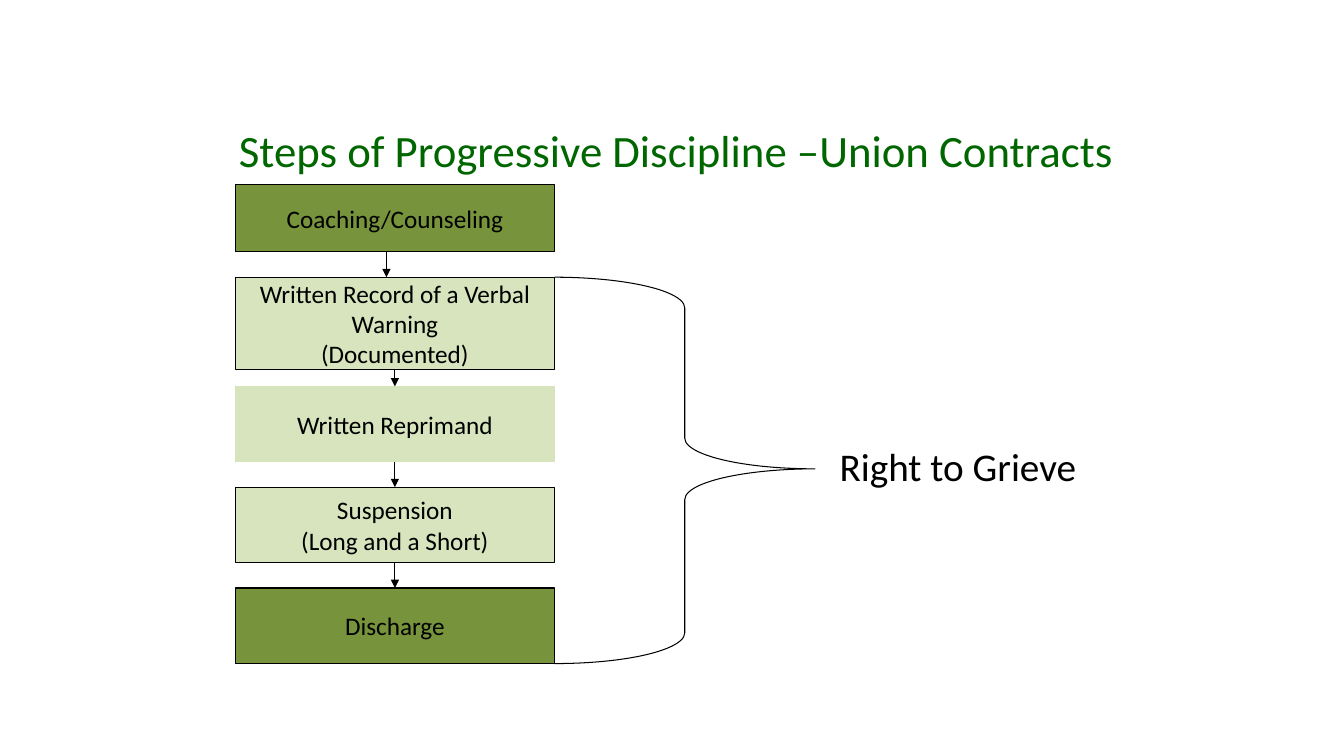
from pptx import Presentation
from pptx.dml.color import RGBColor
from pptx.enum.shapes import MSO_CONNECTOR as Link, MSO_SHAPE as Shape
from pptx.enum.text import MSO_ANCHOR as Anchor, PP_ALIGN as Align
from pptx.oxml.ns import qn
from pptx.util import Inches, Pt
from lxml.etree import SubElement

COLORS = {"title": "006600", "ink": "000000", "dark": "77933C", "light": "D7E4BD"}
TITLE = "Steps of Progressive Discipline –Union Contracts"
BRACE_LABEL = "Right to Grieve"
STEPS = [
    {"lines": ["Coaching/Counseling"], "top": 22, "rows": 8, "fill": "dark", "line": "ink"},
    {"lines": ["Written Record of a Verbal", "Warning", "(Documented)"],
     "top": 33, "rows": 11, "fill": "light", "line": "ink"},
    {"lines": ["Written Reprimand"], "top": 46, "rows": 9, "fill": "light", "line": "light"},
    {"lines": ["Suspension", "(Long and a Short)"],
     "top": 58, "rows": 9, "fill": "light", "line": "ink"},
    {"lines": ["Discharge"], "top": 70, "rows": 9, "fill": "dark", "line": "ink"},
]
CELL = Inches(1) // 12
STEP_LEFT, STEP_COLUMNS = 28, 38
FIRST_ARROW_COLUMN = 46
BRACE_COLUMNS = 31
BRACE_SHAPE = (0.118, 0.496)


def cells(*counts):
    return [count * CELL for count in counts]


def color(name):
    return RGBColor.from_string(COLORS[name])


def write(box, lines, size, ink="ink", **frame_format):
    frame = box.text_frame
    settings = {"word_wrap": False, "vertical_anchor": Anchor.MIDDLE, **frame_format}
    for name, value in settings.items():
        setattr(frame, name, value)
    for index, line in enumerate(lines):
        para = frame.paragraphs[0] if index == 0 else frame.add_paragraph()
        para.alignment = Align.CENTER
        span = para.add_run()
        span.text = line
        for name, value in {"name": "Calibri", "size": Pt(size)}.items():
            setattr(span.font, name, value)
        span.font.color.rgb = color(ink)


def outline(shape, ink="ink"):
    shape.line.color.rgb = color(ink)
    shape.line.width = Pt(0.75)


def add_step(page, step):
    box = page.shapes.add_shape(
        Shape.RECTANGLE, *cells(STEP_LEFT, step["top"], STEP_COLUMNS, step["rows"]))
    box.shadow.inherit = False
    box.fill.solid()
    box.fill.fore_color.rgb = color(step["fill"])
    outline(box, step["line"])
    write(box, step["lines"], 18)
    return box


def add_arrow(page, upper, lower, column=None):
    x = upper.left + upper.width // 2 if column is None else column * CELL
    arrow = page.shapes.add_connector(
        Link.STRAIGHT, x, upper.top + upper.height, x, lower.top)
    if column is None:
        arrow.begin_connect(upper, 2)
        arrow.end_connect(lower, 0)
    outline(arrow)
    SubElement(arrow.line._get_or_add_ln(), qn("a:tailEnd"), type="triangle")
    SubElement(arrow._element.spPr, qn("a:effectLst"))


def add_brace(page, first, last):
    left = first.left + first.width
    height = last.top + last.height - first.top
    brace = page.shapes.add_shape(
        Shape.RIGHT_BRACE, left, first.top, BRACE_COLUMNS * CELL, height)
    for index, share in enumerate(BRACE_SHAPE):
        brace.adjustments[index] = share
    brace.shadow.inherit = False
    brace.fill.background()
    outline(brace)


def main():
    deck = Presentation()
    deck.slide_width, deck.slide_height = Inches(13.33), Inches(7.5)
    page = deck.slides.add_slide(deck.slide_layouts[6])

    title = page.shapes.add_textbox(*cells(26, 12, 109, 9))
    write(title, [TITLE], 32, "title", word_wrap=True,
          vertical_anchor=Anchor.BOTTOM, margin_bottom=0)

    boxes = [add_step(page, step) for step in STEPS]
    for index, (upper, lower) in enumerate(zip(boxes, boxes[1:])):
        add_arrow(page, upper, lower, FIRST_ARROW_COLUMN if index == 0 else None)

    add_brace(page, boxes[1], boxes[-1])
    label = page.shapes.add_textbox(*cells(98, 49, 32, 13))
    write(label, [BRACE_LABEL], 28)

    deck.save("out.pptx")


if __name__ == "__main__":
    main()
